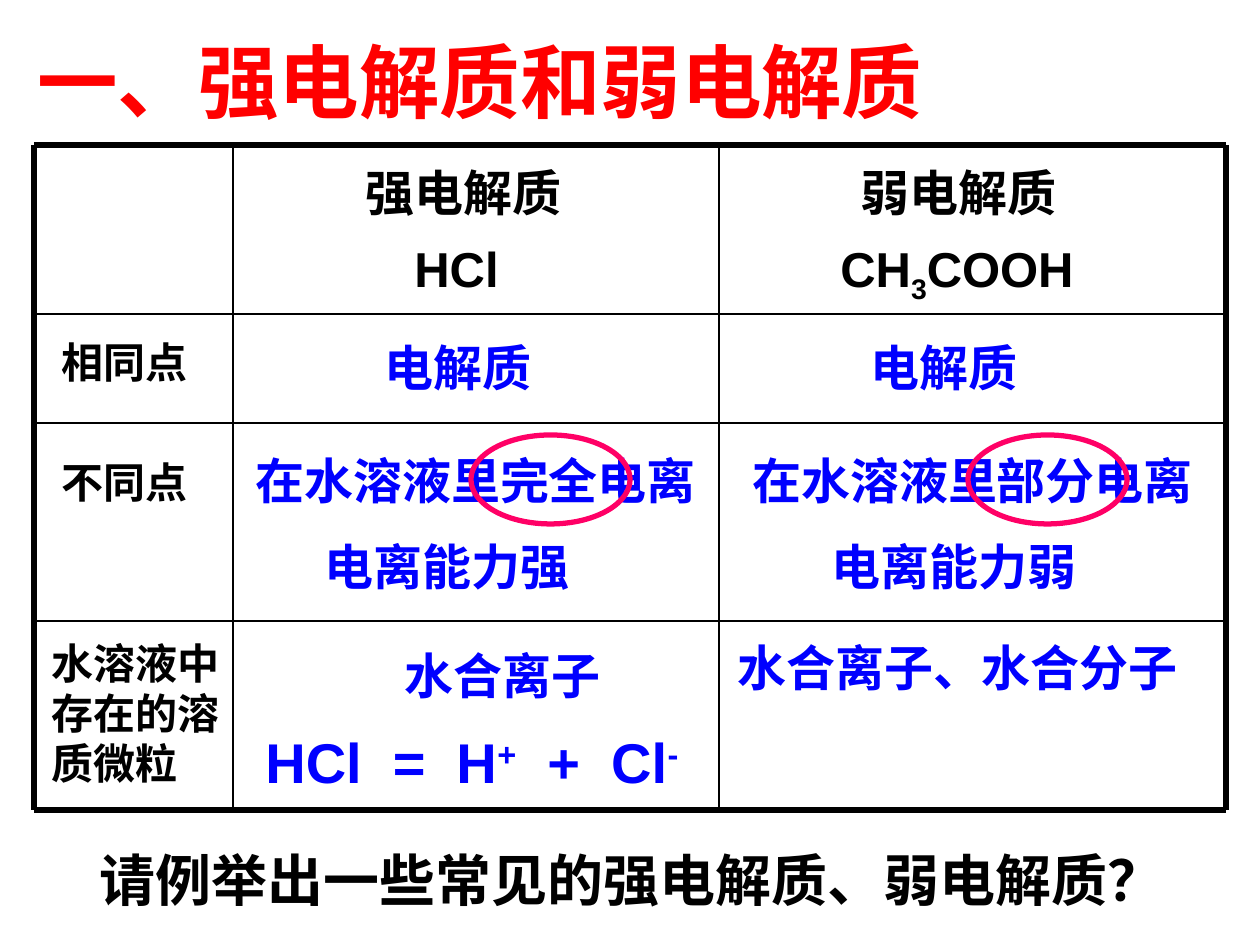
import pptx
import pptx.dml.color
import pptx.enum.shapes
import pptx.enum.text
import pptx.oxml
import pptx.oxml.ns
import pptx.util

EMU_PER_PX = 914400 / 126
FONT = "Arial"
BLACK, BLUE, RED, PINK = "000000", "0000FF", "FF0000", "FF0066"
COLUMNS = [34, 233, 719, 1226]
ROWS = [145, 314, 423, 621, 810]
SUB, SUPER = -25000, 30000

# left, top, width, size, colour, text
LABELS = [
    (25, 26, 1042, 46, RED, "一、强电解质和弱电解质"),
    (353, 156, 248, 28, BLACK, "强电解质"),
    (848, 156, 248, 28, BLACK, "弱电解质"),
    (402, 232, 118, 28, BLACK, "HCl"),
    (49, 330, 184, 24, BLACK, "相同点"),
    (372, 331, 199, 28, BLUE, "电解质"),
    (858, 331, 199, 28, BLUE, "电解质"),
    (49, 450, 194, 24, BLACK, "不同点"),
    (243, 444, 496, 28, BLUE, "在水溶液里完全电离"),
    (740, 444, 486, 28, BLUE, "在水溶液里部分电离"),
    (312, 530, 307, 28, BLUE, "电离能力强"),
    (819, 530, 318, 28, BLUE, "电离能力弱"),
    (392, 639, 268, 28, BLUE, "水合离子"),
    (725, 631, 494, 28, BLUE, "水合离子、水合分子"),
]


def px(n):
    return pptx.util.Emu(round(n * EMU_PER_PX))


def rgb(value):
    return pptx.dml.color.RGBColor.from_string(value)


def add_text(s, left, top, width, size, color, *parts, lines=1, wrap=True):
    """Add a bold label; a part is a string or a (string, baseline) pair."""
    height = 13 + 2.1 * size * lines
    sp = s.shapes.add_textbox(px(left), px(top), px(width), px(height))
    tf = sp.text_frame
    tf.word_wrap = wrap
    tf.auto_size = pptx.enum.text.MSO_AUTO_SIZE.SHAPE_TO_FIT_TEXT
    for part in parts:
        text, baseline = (part, 0) if isinstance(part, str) else part
        r = tf.paragraphs[0].add_run()
        r.text = text
        r.font.name = FONT
        r.font.size = pptx.util.Pt(size)
        r.font.bold = True
        r.font.color.rgb = rgb(color)
        if baseline:
            r._r.get_or_add_rPr().set("baseline", str(baseline))


def add_line(s, x1, y1, x2, y2, weight):
    line = s.shapes.add_connector(
        pptx.enum.shapes.MSO_CONNECTOR.STRAIGHT, px(x1), px(y1), px(x2), px(y2))
    line.line.color.rgb = rgb(BLACK)
    line.line.width = pptx.util.Pt(weight)
    sp_pr = line._element.spPr
    sp_pr.append(pptx.oxml.parse_xml(
        "<a:effectLst %s/>" % pptx.oxml.ns.nsdecls("a")))


def add_grid(s):
    """Draw the table rules, heavier on the outer frame."""
    for y in ROWS:
        weight = 3 if y in (ROWS[0], ROWS[-1]) else 1.5
        add_line(s, COLUMNS[0], y, COLUMNS[-1], y, weight)
    for x in COLUMNS:
        weight = 3 if x in (COLUMNS[0], COLUMNS[-1]) else 1.5
        add_line(s, x, ROWS[0], x, ROWS[-1], weight)


def add_ring(s, left, top, width, height):
    sp = s.shapes.add_shape(pptx.enum.shapes.MSO_SHAPE.OVAL,
                            px(left), px(top), px(width), px(height))
    sp.shadow.inherit = False
    sp.fill.background()
    sp.line.color.rgb = rgb(PINK)
    sp.line.width = pptx.util.Pt(3)


def main():
    prs = pptx.Presentation()
    prs.slide_width, prs.slide_height = px(1260), px(945)
    s = prs.slides.add_slide(prs.slide_layouts[6])

    add_grid(s)
    for label in LABELS:
        add_text(s, *label)
    add_text(s, 828, 232, 328, 28, BLACK, "CH", ("3", SUB), "COOH")
    add_text(s, 39, 631, 198, 24, BLACK, "水溶液中存在的溶质微粒", lines=3)
    add_text(s, 253, 721, 442, 32, BLUE,
             "HCl  =  H", ("+", SUPER), "  +  Cl", ("-", SUPER), wrap=False)
    add_text(s, 87, 839, 1094, 32, BLACK,
             "请例举出一些常见的强电解质、弱电解质？", wrap=False)
    for left in (471, 968):
        add_ring(s, left, 435, 159, 89)

    prs.save("out.pptx")


if __name__ == "__main__":
    main()
